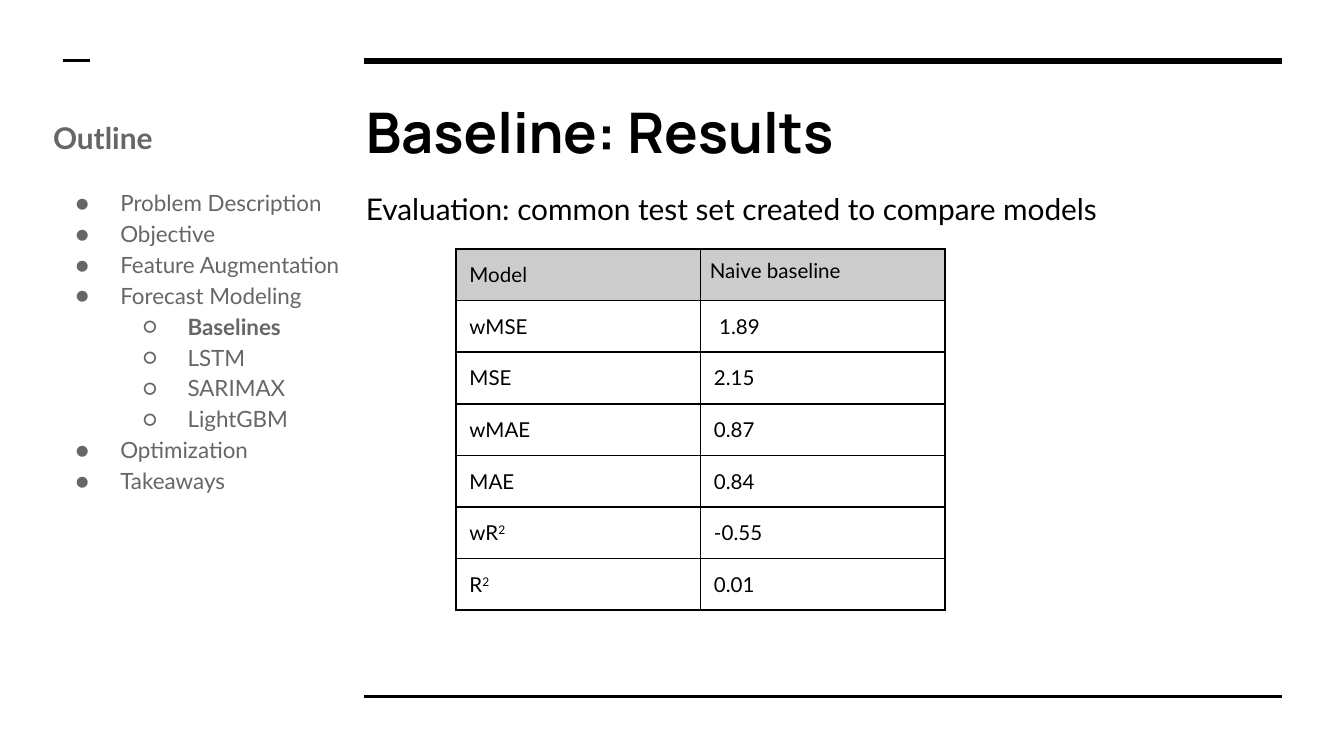
"""Build the baseline results slide with its outline and score table."""
from dataclasses import dataclass

from lxml import etree
from pptx import Presentation
from pptx.dml.color import RGBColor
from pptx.enum.shapes import MSO_CONNECTOR
from pptx.enum.text import MSO_ANCHOR, MSO_AUTO_SIZE, PP_ALIGN
from pptx.oxml.ns import qn
from pptx.util import Pt

STRAIGHT = MSO_CONNECTOR.STRAIGHT
TOP, MIDDLE = MSO_ANCHOR.TOP, MSO_ANCHOR.MIDDLE
NO_AUTOFIT = MSO_AUTO_SIZE.NONE
LEFT = PP_ALIGN.LEFT


@dataclass(frozen=True)
class Theme:
    ink: str = "000000"
    muted: str = "666666"
    header: str = "CCCCCC"
    heading_font: str = "Manrope"
    text_font: str = "Lato"
    title_size: float = 30
    lead_size: float = 16
    outline_size: float = 12
    table_size: float = 11
    inset: float = 7.2


@dataclass(frozen=True)
class Rule:
    start: float
    end: float
    y: float
    weight: float


@dataclass(frozen=True)
class Topic:
    label: str
    level: int = 0
    current: bool = False


@dataclass(frozen=True)
class Score:
    metric: str
    value: str
    exponent: str = ""


THEME = Theme()
RULES = [
    Rule(195.1, 686.9, 32.6, 3),
    Rule(195.1, 686.9, 373, 1.5),
    Rule(33.6, 48, 32.6, 1.5),
]
TOPICS = [
    Topic("Problem Description"),
    Topic("Objective"),
    Topic("Feature Augmentation"),
    Topic("Forecast Modeling"),
    Topic("Baselines", 1, True),
    Topic("LSTM", 1),
    Topic("SARIMAX", 1),
    Topic("LightGBM", 1),
    Topic("Optimization"),
    Topic("Takeaways"),
]
SCORES = [
    Score("Model", "Naive baseline"),
    Score("wMSE", " 1.89"),
    Score("MSE", "2.15"),
    Score("wMAE", "0.87"),
    Score("MAE", "0.84"),
    Score("wR", "-0.55", "2"),
    Score("R", "0.01", "2"),
]
BULLETS = "●○"
COLUMN_WIDTH, ROW_HEIGHT = 131, 27.3


def style_runs(paragraph, size: float, color: str = THEME.ink,
               bold: bool = False, font: str = THEME.text_font) -> None:
    for run in paragraph.runs:
        run.font.name = font
        run.font.size = Pt(size)
        run.font.bold = bold
        run.font.color.rgb = RGBColor.from_string(color)


def set_insets(target, inset: float = THEME.inset) -> None:
    target.margin_left = target.margin_right = Pt(inset)
    target.margin_top = target.margin_bottom = Pt(inset)


def add_color(parent, color: str) -> None:
    etree.SubElement(parent, qn("a:srgbClr"), val=color)


def draw_rule(slide, rule: Rule) -> None:
    connector = slide.shapes.add_connector(
        STRAIGHT, Pt(rule.start), Pt(rule.y), Pt(rule.end), Pt(rule.y))
    connector.line.color.rgb = RGBColor.from_string(THEME.ink)
    connector.line.width = Pt(rule.weight)
    etree.SubElement(connector._element.spPr, qn("a:effectLst"))


def fill_placeholder(placeholder, text: str, top: float, height: float,
                     anchor: MSO_ANCHOR, size: float, bold: bool, font: str) -> None:
    placeholder.left, placeholder.top = Pt(188.8), Pt(top)
    placeholder.width, placeholder.height = Pt(497.7), Pt(height)
    frame = placeholder.text_frame
    frame.text = text
    frame.word_wrap = True
    frame.auto_size = NO_AUTOFIT
    frame.vertical_anchor = anchor
    set_insets(frame)
    paragraph = frame.paragraphs[0]
    properties = paragraph._p.get_or_add_pPr()
    properties.set("marL", "0")
    properties.set("indent", "0")
    etree.SubElement(properties, qn("a:buNone"))
    paragraph.alignment = LEFT
    paragraph.space_before = Pt(0)
    style_runs(paragraph, size, bold=bold, font=font)


def add_topic(frame, topic: Topic, space_before: float) -> None:
    paragraph = frame.add_paragraph()
    paragraph.text = topic.label
    paragraph.level = topic.level
    properties = paragraph._p.get_or_add_pPr()
    properties.set("marL", str(Pt(36 * (topic.level + 1))))
    properties.set("indent", str(-Pt(24)))
    add_color(etree.SubElement(properties, qn("a:buClr")), THEME.muted)
    etree.SubElement(properties, qn("a:buFont"), typeface=THEME.text_font)
    etree.SubElement(properties, qn("a:buChar"), char=BULLETS[topic.level])
    paragraph.line_spacing = 1.15
    paragraph.space_before = Pt(space_before)
    style_runs(paragraph, THEME.outline_size, THEME.muted, topic.current)


def draw_outline(slide) -> None:
    outline = slide.shapes.add_textbox(Pt(21.4), Pt(54), Pt(167.8), Pt(306.7))
    frame = outline.text_frame
    frame.word_wrap = True
    set_insets(frame)
    frame.text = "Outline"
    heading = frame.paragraphs[0]
    heading.line_spacing = 1.15
    style_runs(heading, THEME.lead_size, THEME.muted, True)
    for index, topic in enumerate(TOPICS):
        add_topic(frame, topic, 0 if index else 16)


def format_cell(cell, text: str, exponent: str, is_header: bool) -> None:
    cell.text_frame.text = text
    paragraph = cell.text_frame.paragraphs[0]
    if exponent:
        raised = paragraph.add_run()
        raised.text = exponent
        raised._r.get_or_add_rPr().set("baseline", "30000")
    style_runs(paragraph, THEME.table_size)
    set_insets(cell)
    cell.vertical_anchor = TOP
    properties = cell._tc.get_or_add_tcPr()
    for side in ("a:lnL", "a:lnR", "a:lnT", "a:lnB"):
        border = etree.SubElement(properties, qn(side), w=str(Pt(1)))
        add_color(etree.SubElement(border, qn("a:solidFill")), THEME.ink)
    if is_header:
        cell.fill.solid()
        cell.fill.fore_color.rgb = RGBColor.from_string(THEME.header)
    else:
        cell.fill.background()


def draw_scores(slide) -> None:
    table = slide.shapes.add_table(
        len(SCORES), 2, Pt(244.3), Pt(133.4),
        Pt(2 * COLUMN_WIDTH), Pt(len(SCORES) * ROW_HEIGHT)).table
    table.first_row = table.horz_banding = False
    for column in table.columns:
        column.width = Pt(COLUMN_WIDTH)
    for index, score in enumerate(SCORES):
        table.rows[index].height = Pt(ROW_HEIGHT)
        format_cell(table.cell(index, 0), score.metric, score.exponent, index == 0)
        format_cell(table.cell(index, 1), score.value, "", index == 0)
    set_insets(table.cell(0, 1), 5)


def main() -> None:
    deck = Presentation()
    deck.slide_width, deck.slide_height = Pt(720), Pt(405)
    slide = deck.slides.add_slide(deck.slide_layouts[1])
    for rule in RULES:
        draw_rule(slide, rule)
    fill_placeholder(slide.placeholders[1],
                     "Evaluation: common test set created to compare models",
                     95, 276.5, TOP, THEME.lead_size, False, THEME.text_font)
    fill_placeholder(slide.shapes.title, "Baseline: Results",
                     45.5, 49.7, MIDDLE, THEME.title_size, True, THEME.heading_font)
    draw_outline(slide)
    draw_scores(slide)
    deck.save("out.pptx")


if __name__ == "__main__":
    main()
